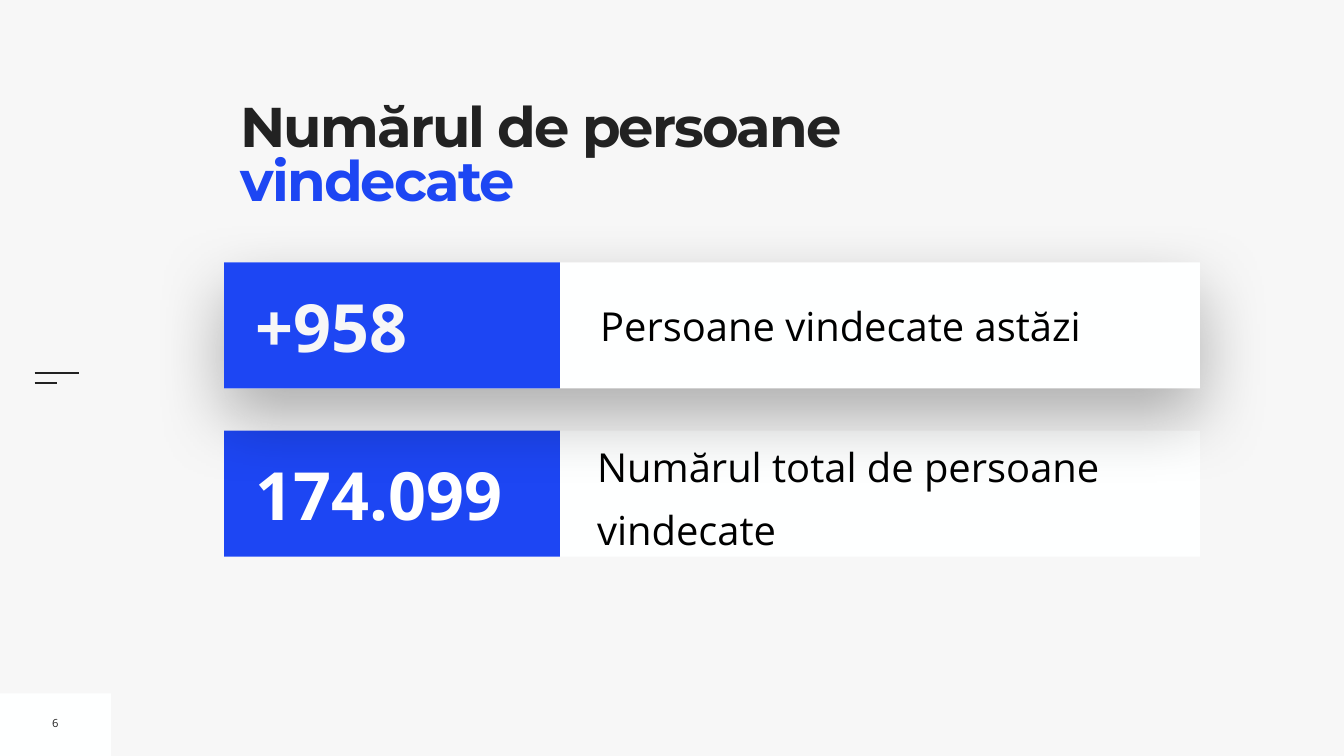
from dataclasses import dataclass

from lxml import etree
from pptx import Presentation
from pptx import util as u
from pptx.dml.color import RGBColor
from pptx.enum import shapes, text
from pptx.oxml import parse_xml
from pptx.oxml.ns import nsdecls, qn

Cm, Pt = u.Cm, u.Pt


@dataclass(frozen=True)
class Theme:
    back: str = "F7F7F7"
    card: str = "FEFFFF"
    blue: str = "1D46F3"
    dark: str = "222222"
    black: str = "000000"
    white: str = "FFFFFF"
    head: str = "Montserrat"
    body: str = "Open Sans"
    title: int = 80
    count: int = 95
    label: int = 57
    page: int = 16


THEME = Theme()
LEFT, WIDE, HIGH, TAB = 11.3, 49.18, 6.35, 16.92


def rgb(code):
    return RGBColor.from_string(code)


def apply(obj, form):
    for name, value in form.items():
        setattr(obj, name, value)


def add_rect(owner, area, fill):
    rect = owner.add_shape(shapes.MSO_SHAPE.RECTANGLE, *map(Cm, area))
    rect.shadow.inherit = False
    rect.fill.solid()
    rect.fill.fore_color.rgb = rgb(fill)
    rect.line.fill.background()
    return rect


def add_text(owner, area, runs, size, font=THEME.body, bold=False,
             inset=0.25, anchor=text.MSO_ANCHOR.MIDDLE, wrap=True,
             para=None, track=None):
    box = owner.add_textbox(*map(Cm, area))
    frame = box.text_frame
    sides = ("left", "top", "right", "bottom")
    apply(frame, {f"margin_{side}": Cm(inset) for side in sides})
    apply(frame, {"word_wrap": wrap, "vertical_anchor": anchor})
    line = frame.paragraphs[0]
    apply(line, para or {})
    for words, color in runs:
        run = line.add_run()
        run.text = words
        apply(run.font, {"name": font, "size": Pt(size), "bold": bold})
        run.font.color.rgb = rgb(color)
        if track is not None:
            run.font._element.set("spc", str(track))
    return box


def add_line(owner, left, top, width):
    line = owner.add_connector(shapes.MSO_CONNECTOR.STRAIGHT,
                               Cm(left), Cm(top), Cm(left + width), Cm(top))
    line.line.color.rgb = rgb(THEME.dark)
    line.line.width = Pt(3)
    etree.SubElement(line._element.spPr, qn("a:effectLst"))


def cast_shadow(shape):
    effect = shape._element.spPr.find(qn("a:effectLst"))
    effect.append(parse_xml(
        f'<a:outerShdw {nsdecls("a")} blurRad="{Pt(100)}" dist="{Pt(40)}" '
        f'dir="5400000" rotWithShape="0"><a:srgbClr val="{THEME.black}">'
        '<a:alpha val="30000"/></a:srgbClr></a:outerShdw>'))


def add_card(slide, top, count, color, label, area, raised=False, **form):
    group = slide.shapes.add_group_shape().shapes
    base = add_rect(group, (LEFT, top, WIDE, HIGH), THEME.card)
    if raised:
        cast_shadow(base)
    add_text(group, area, [(label, THEME.black)], THEME.label, **form)
    add_rect(group, (LEFT, top, TAB, HIGH), THEME.blue)
    add_text(group, (LEFT + 1.35, top + 0.89, 15.32, 4.57),
             [(count, color)], THEME.count, bold=True)


def main():
    deck = Presentation()
    apply(deck, {"slide_width": Cm(67.74), "slide_height": Cm(38.1)})
    slide = deck.slides.add_slide(deck.slide_layouts[6])
    slide.background.fill.solid()
    slide.background.fill.fore_color.rgb = rgb(THEME.back)

    add_rect(slide.shapes, (0, 34.95, 5.59, 3.15), THEME.card)
    for top, width in ((18.82, 2.24), (19.28, 1.12)):
        add_line(slide.shapes, 1.75, top, width)

    title = add_text(
        slide.shapes, (12.12, 5.26, 33.05, 6.93),
        [("Numărul de persoane ", THEME.dark), ("vindecate", THEME.blue)],
        THEME.title, font=THEME.head, bold=True, inset=0,
        anchor=text.MSO_ANCHOR.TOP, para={"line_spacing": 0.8}, track=-270)
    title.fill.solid()
    title.fill.fore_color.rgb = rgb(THEME.back)

    add_text(slide.shapes, (2.36, 35.79, 0.86, 1.3), [("6", THEME.dark)],
             THEME.page, wrap=False, para={"alignment": text.PP_ALIGN.CENTER})

    add_card(slide, 21.7, "174.099", THEME.white,
             "Numărul total de persoane vindecate", (30.1, 21.74, 30.35, 5.99),
             inset=0, para={"line_spacing": 1.3})
    add_card(slide, 13.23, "+958", THEME.back,
             "Persoane vindecate astăzi", (30, 14.91, 29.87, 2.95), raised=True)

    deck.save("out.pptx")


if __name__ == "__main__":
    main()
